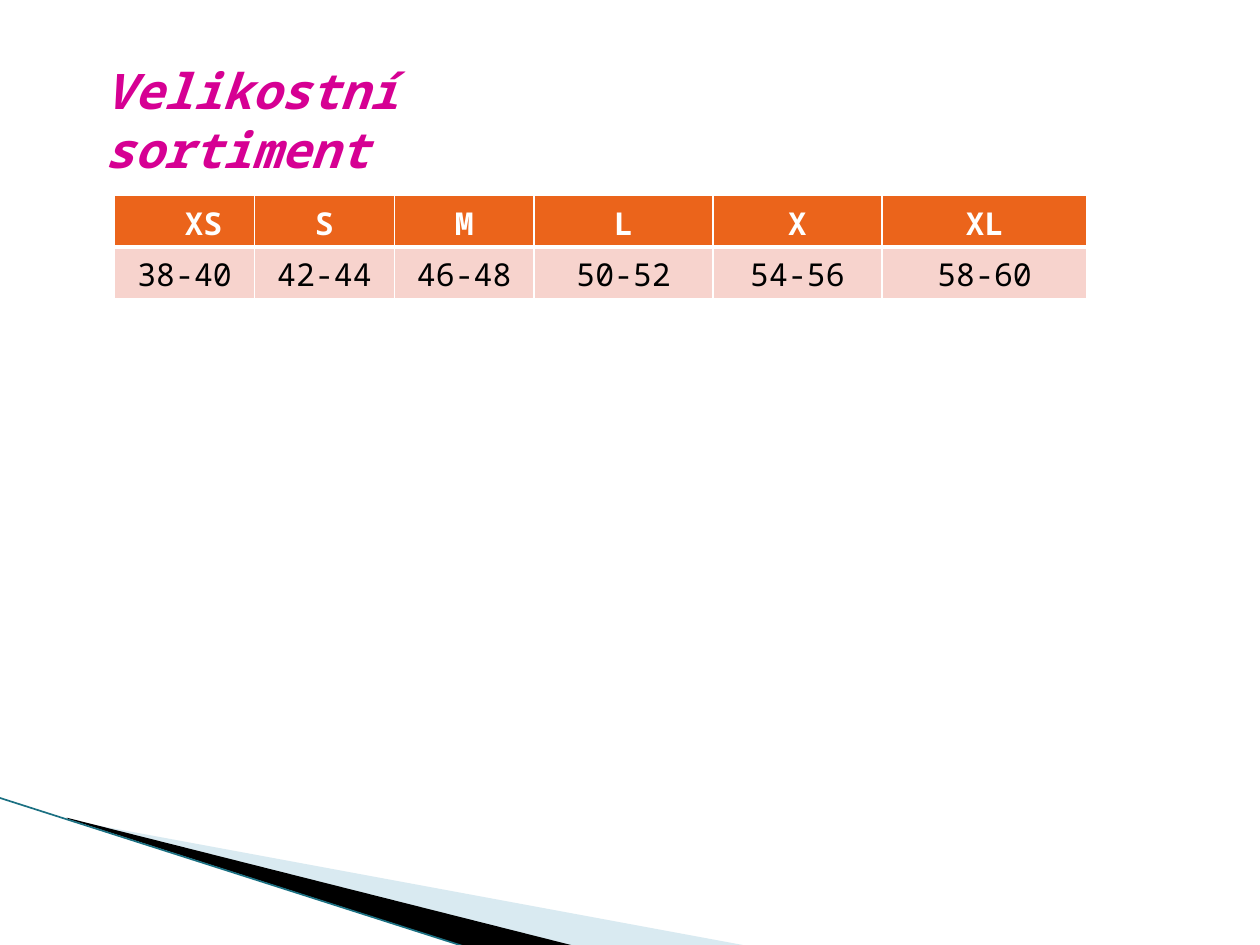
from lxml import etree
from pptx import Presentation
from pptx.dml.color import RGBColor
from pptx.enum.shapes import MSO_CONNECTOR as Connector
from pptx.enum.text import MSO_ANCHOR as Anchor, MSO_AUTO_SIZE as AutoSize, PP_ALIGN as Align
from pptx.oxml.ns import qn
from pptx.util import Inches, Pt

FONT = "Noto Sans Mono"
SIZES = [("XS", "38-40"), ("S", "42-44"), ("M", "46-48"),
         ("L", "50-52"), ("X", "54-56"), ("XL", "58-60")]
COLUMN_WIDTHS = [1.11, 1.11, 1.11, 1.42, 1.34, 1.63]
ROW_HEIGHT = 0.41
HEADER = {"fill": "EB641B", "color": "FFFFFF", "bold": True}
RANGE = {"fill": "F7D3CD", "color": "000000", "bold": False}


def rgb(value):
    return RGBColor.from_string(value)


def format_text(paragraph, align, color, **values):
    paragraph.alignment = align
    font = paragraph.runs[0].font
    for name, value in {"name": FONT, **values}.items():
        setattr(font, name, value)
    font.color.rgb = rgb(color)


def add_wedge(slide, points, color, alpha=None):
    start, *rest = [(Inches(x), Inches(y)) for x, y in points]
    builder = slide.shapes.build_freeform(*start)
    builder.add_line_segments(rest, close=True)
    wedge = builder.convert_to_shape()
    wedge.shadow.inherit = False
    wedge.fill.solid()
    wedge.fill.fore_color.rgb = rgb(color)
    wedge.line.fill.background()
    if alpha is not None:
        tint = wedge.fill._xPr.find(".//" + qn("a:srgbClr"))
        etree.SubElement(tint, qn("a:alpha"), val=str(alpha * 1000))


def add_edge(slide, start, end, color, width):
    points = [Inches(value) for value in (*start, *end)]
    edge = slide.shapes.add_connector(Connector.STRAIGHT, *points)
    edge.line.color.rgb = rgb(color)
    edge.line.width = Pt(width)
    etree.SubElement(edge._element.spPr, qn("a:effectLst"))


def set_title(slide, wording):
    title = slide.shapes.title
    title.left, title.top, title.width, title.height = map(Inches, (0.73, 0.43, 4.05, 0.57))
    frame = title.text_frame
    frame.text = wording
    for name, value in {"word_wrap": True, "auto_size": AutoSize.SHAPE_TO_FIT_TEXT,
                        "vertical_anchor": Anchor.TOP}.items():
        setattr(frame, name, value)
    format_text(frame.paragraphs[0], Align.LEFT, "D60093",
                size=Pt(28), bold=True, italic=True)


def set_borders(cell, widths):
    properties = cell._tc.get_or_add_tcPr()
    for side, width in widths.items():
        border = etree.SubElement(properties, qn(f"a:ln{side}"), w=str(Pt(width)))
        fill = etree.SubElement(border, qn("a:solidFill"))
        etree.SubElement(fill, qn("a:srgbClr"), val="FFFFFF")


def fill_cell(cell, wording, style, borders):
    set_borders(cell, borders)
    cell.fill.solid()
    cell.fill.fore_color.rgb = rgb(style["fill"])
    cell.text = wording
    format_text(cell.text_frame.paragraphs[0], Align.CENTER, style["color"],
                size=Pt(18), bold=style["bold"])


def add_size_table(slide):
    table = slide.shapes.add_table(
        2, len(SIZES), Inches(0.91), Inches(1.55),
        Inches(sum(COLUMN_WIDTHS)), Inches(2 * ROW_HEIGHT)).table
    for row in table.rows:
        row.height = Inches(ROW_HEIGHT)
    for index, ((size, measure), width) in enumerate(zip(SIZES, COLUMN_WIDTHS)):
        table.columns[index].width = Inches(width)
        fill_cell(table.cell(0, index), size, HEADER, {"L": 1, "R": 1, "T": 1, "B": 3})
        fill_cell(table.cell(1, index), measure, RANGE, {"L": 1, "R": 1, "T": 3, "B": 1})
    # The first label sits right of centre
    table.cell(0, 0).margin_left = Inches(0.4)


def main():
    deck = Presentation()
    deck.slide_width, deck.slide_height = Inches(10), Inches(7.5)
    slide = deck.slides.add_slide(deck.slide_layouts[5])

    # Corner decoration
    add_wedge(slide, [(0.55, 6.51), (5.95, 7.51), (4.56, 7.51), (0.55, 6.5)], "A0CBDC", 40)
    add_wedge(slide, [(0.53, 6.49), (4.57, 7.51), (3.72, 7.52), (0.54, 6.5)], "000000")
    add_edge(slide, (-0.01, 6.33), (3.71, 7.52), "1B7082", 0.95)

    # Heading and sizes
    set_title(slide, "Velikostní sortiment")
    add_size_table(slide)
    deck.save("out.pptx")


if __name__ == "__main__":
    main()
